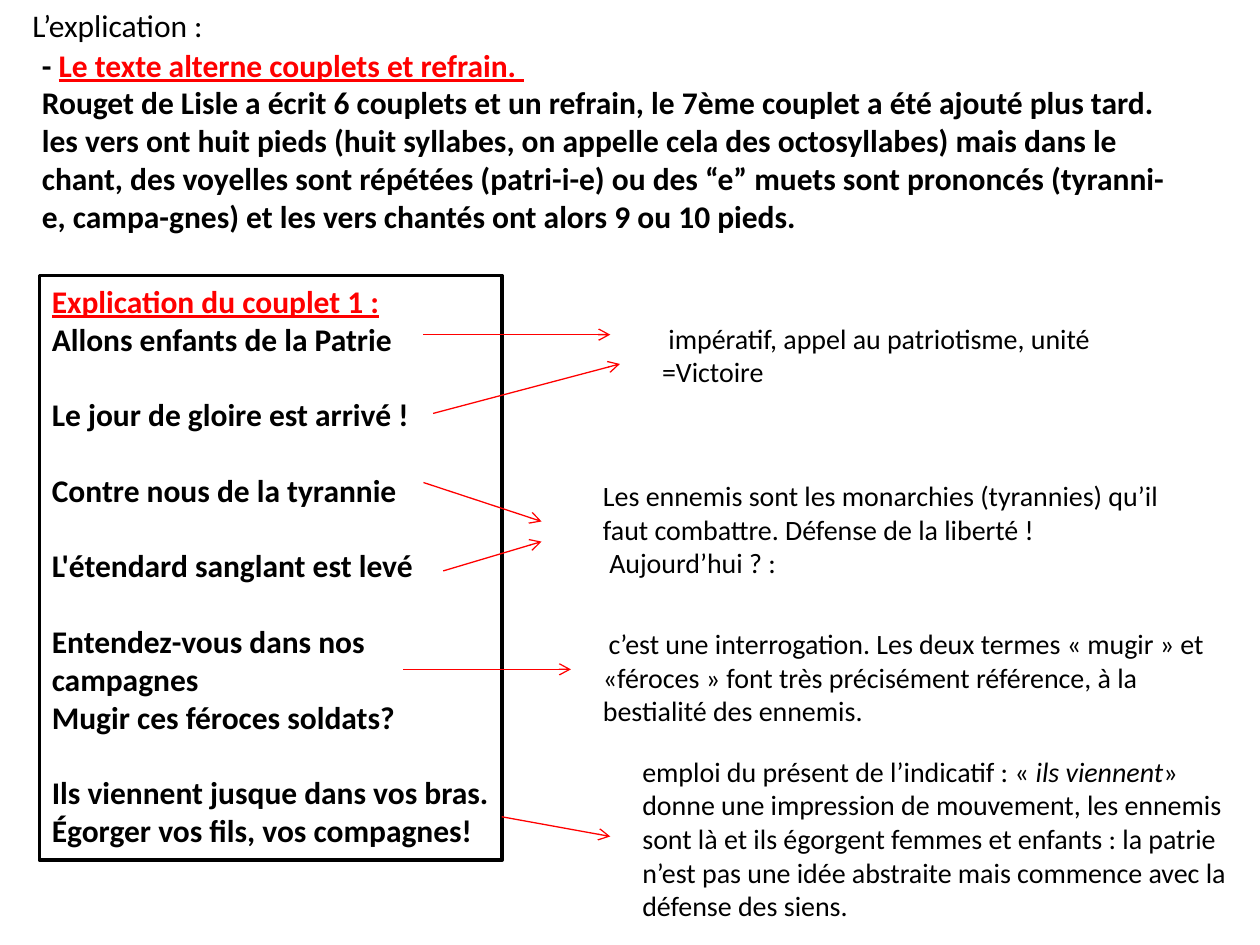
import pptx
import pptx.util
import pptx.dml.color
import pptx.enum.shapes
import pptx.enum.text
import pptx.oxml
import pptx.oxml.ns
import lxml.etree

Pt = pptx.util.Pt
COLORS = {"ink": "000000", "accent": "FF0000", "paper": "FFFFFF"}
HEADING = {"underline": True, "color": "accent"}
VERSE_GAP = 21.6


class LessonSlide:
    font = "Calibri"
    frame_format = {
        "word_wrap": True,
        "auto_size": pptx.enum.text.MSO_AUTO_SIZE.NONE,
        "vertical_anchor": pptx.enum.text.MSO_ANCHOR.TOP,
    }
    paragraph_format = {
        "alignment": pptx.enum.text.PP_ALIGN.LEFT,
        "space_before": Pt(0),
        "space_after": Pt(0),
    }

    def __init__(self, deck):
        self.slide = deck.slides.add_slide(deck.slide_layouts[1])

    def rgb(self, color):
        return pptx.dml.color.RGBColor.from_string(COLORS[color])

    def apply(self, target, values):
        for name, value in values.items():
            setattr(target, name, value)

    def fill_text(self, frame, paragraphs, size, bold=False):
        self.apply(frame, self.frame_format)
        for index, runs in enumerate(paragraphs):
            paragraph = frame.add_paragraph() if index else frame.paragraphs[0]
            self.apply(paragraph, self.paragraph_format)
            for text, extra in runs:
                run = paragraph.add_run()
                run.text = text
                values = {"name": self.font, "size": Pt(size), "bold": bold, **extra}
                run.font.color.rgb = self.rgb(values.pop("color", "ink"))
                self.apply(run.font, values)

    def place(self, holder, box):
        sides = ("left", "top", "width", "height")
        self.apply(holder, dict(zip(sides, map(Pt, box))))

    def title(self, box, text):
        holder = self.slide.shapes.title
        self.place(holder, box)
        self.fill_text(holder.text_frame, [[(text, {})]], 18)

    def body(self, box, paragraphs):
        holder = self.slide.placeholders[1]
        self.place(holder, box)
        self.fill_text(holder.text_frame, paragraphs, 18, bold=True)
        for paragraph in holder.text_frame.paragraphs:
            properties = paragraph._p.get_or_add_pPr()
            properties.set("marL", "0")
            properties.set("indent", "0")
            lxml.etree.SubElement(properties, pptx.oxml.ns.qn("a:buNone"))

    def poem(self, box, heading, stanzas):
        frame = self.slide.shapes.add_shape(
            pptx.enum.shapes.MSO_SHAPE.RECTANGLE, *map(Pt, box))
        frame.shadow.inherit = False
        frame.fill.solid()
        frame.fill.fore_color.rgb = self.rgb("paper")
        frame.line.color.rgb = self.rgb("ink")
        frame.line.width = Pt(2)
        verses = [[(verse, {})] for stanza in stanzas for verse in stanza]
        self.fill_text(frame.text_frame, [[(heading, HEADING)]] + verses, 18, bold=True)
        last = 0
        for stanza in stanzas[:-1]:
            last += len(stanza)
            frame.text_frame.paragraphs[last].space_after = Pt(VERSE_GAP)

    def note(self, box, paragraphs):
        comment = self.slide.shapes.add_textbox(*map(Pt, box))
        self.fill_text(comment.text_frame, paragraphs, 16)

    def arrow(self, *ends):
        link = self.slide.shapes.add_connector(
            pptx.enum.shapes.MSO_CONNECTOR.STRAIGHT, *map(Pt, ends))
        link.line.color.rgb = self.rgb("accent")
        link.line.width = Pt(0.75)
        tail = lxml.etree.SubElement(
            link.line._get_or_add_ln(), pptx.oxml.ns.qn("a:tailEnd"))
        tail.set("type", "arrow")
        lxml.etree.SubElement(
            link._element.spPr, pptx.oxml.ns.qn("a:effectLst"))


def main():
    deck = pptx.Presentation()
    deck.slide_width, deck.slide_height = Pt(720), Pt(540)
    lesson = LessonSlide(deck)

    lesson.title((11.25, 0, 292.5, 29), "L’explication :")
    lesson.body((16.75, 22.5, 666, 138), [
        [("- ", {}), ("Le texte alterne couplets et refrain. ", HEADING)],
        [("Rouget de Lisle a écrit 6 couplets et un refrain, le 7ème couplet a été "
          "ajouté plus tard. les vers ont huit pieds (huit syllabes, on appelle cela "
          "des octosyllabes) mais dans le chant, des voyelles sont répétées "
          "(patri-i-e) ou des “e” muets sont prononcés (tyranni-e, campa-gnes) et "
          "les vers chantés ont alors 9 ou 10 pieds.", {})],
    ])
    lesson.poem((22.5, 157.5, 264.5, 334), "Explication du couplet 1 :", [
        ["Allons enfants de la Patrie"],
        ["Le jour de gloire est arrivé !"],
        ["Contre nous de la tyrannie"],
        ["L'étendard sanglant est levé"],
        ["Entendez-vous dans nos campagnes", "Mugir ces féroces soldats?"],
        ["Ils viennent jusque dans vos bras.", "Égorger vos fils, vos compagnes!"],
    ])

    notes = [
        ((371.25, 180, 292.5, 46), [
            [(" impératif, appel au patriotisme, unité =Victoire", {})]]),
        ((337.5, 270, 360, 65.5), [
            [("Les ennemis sont les monarchies (tyrannies) qu’il faut combattre. "
              "Défense de la liberté !", {})],
            [(" Aujourd’hui ? :", {})]]),
        ((337.5, 354.5, 360, 65.5), [
            [(" ", {"size": Pt(14)}),
             ("c’est une interrogation. Les deux termes « mugir » et «féroces » font "
              "très précisément référence, à la bestialité des ennemis.", {})]]),
        ((360, 427.5, 360, 104.5), [
            [("emploi du présent de l’indicatif : « ", {}),
             ("ils viennent", {"italic": True}),
             ("» donne une impression de mouvement, les ennemis sont là et ils "
              "égorgent femmes et enfants : la patrie n’est pas une idée abstraite "
              "mais commence avec la défense des siens.", {})]]),
    ]
    for box, paragraphs in notes:
        lesson.note(box, paragraphs)

    verse_to_note = [
        (242, 191.25, 348.75, 191.25),
        (247.5, 236.25, 354.25, 208),
        (242, 275.75, 309.5, 298),
        (253.25, 326.25, 309.5, 309.5),
        (230.5, 382.5, 326.25, 382.5),
        (286.75, 466.75, 348.75, 478),
    ]
    for ends in verse_to_note:
        lesson.arrow(*ends)

    deck.save("out.pptx")


if __name__ == "__main__":
    main()
